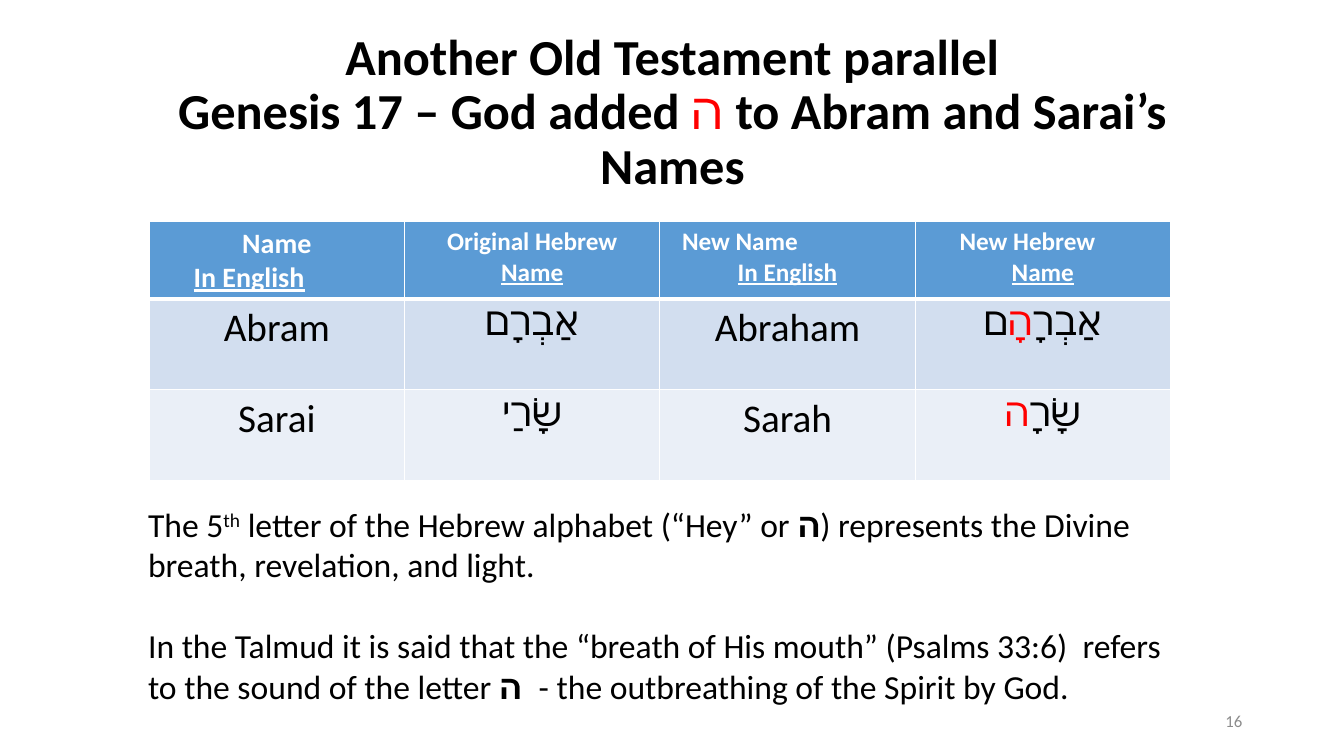
import pptx
import pptx.dml.color
import pptx.enum.text
import pptx.util
import pptx.oxml
import lxml.etree

RGBColor = pptx.dml.color.RGBColor
Inches = pptx.util.Inches
Pt = pptx.util.Pt
ALIGN = pptx.enum.text.PP_ALIGN
ANCHOR = pptx.enum.text.MSO_ANCHOR

BLACK = RGBColor(0x00, 0x00, 0x00)
WHITE = RGBColor(0xFF, 0xFF, 0xFF)
RED = RGBColor(0xFF, 0x00, 0x00)
GRAY = RGBColor(0x8C, 0x8C, 0x8C)
HEADER_BLUE = RGBColor(0x5B, 0x9B, 0xD5)
ROW_BLUES = (RGBColor(0xD2, 0xDE, 0xEF), RGBColor(0xEA, 0xEF, 0xF7))

HEADER_HEIGHT = 0.76
NAME_HEIGHT = 0.9
HEADERS = (
    (20, ("Name", None), ("In English", 0.34)),
    (18, ("Original Hebrew", None), ("Name", None)),
    (18, ("New Name", 0.12), ("In English", None)),
    (18, ("New Hebrew", 0.34), ("Name", None)),
)
NAMES = (
    (("Abram",), ("אַבְרָם",), ("Abraham",),
     ("אַבְרָ", ("הָ", {"color": RED}), "ם")),
    (("Sarai",), ("שָׂרַי",), ("Sarah",),
     ("שָׂרָ", ("ה", {"color": RED}))),
)


def add_run(paragraph, text, size=24, color=BLACK, bold=False, underline=False, baseline=None):
    run = paragraph.add_run()
    run.text = text
    run.font.name = "Calibri"
    run.font.size = Pt(size)
    run.font.color.rgb = color
    run.font.bold = bold
    run.font.underline = underline
    if baseline:
        run.font._element.set("baseline", str(baseline * 1000))


def write_paragraph(frame, pieces, align=ALIGN.LEFT, indent=None, first=True,
                    line_spacing=None, space_before=None, **style):
    paragraph = frame.paragraphs[0] if first else frame.add_paragraph()
    paragraph.alignment = align
    paragraph.line_spacing = line_spacing
    if space_before:
        paragraph.space_before = Pt(space_before)
    if indent:
        paragraph._p.get_or_add_pPr().set("marL", str(Inches(indent)))
    for piece in pieces:
        text, changes = (piece, {}) if isinstance(piece, str) else piece
        if text == "\n":
            paragraph.add_line_break()
        else:
            add_run(paragraph, text, **{**style, **changes})


def add_frame(slide, box, anchor=ANCHOR.TOP):
    frame = slide.shapes.add_textbox(*map(Inches, box)).text_frame
    frame.word_wrap = True
    frame.vertical_anchor = anchor
    return frame


def style_cell(cell, color, bottom_width=1):
    properties = cell._tc.get_or_add_tcPr()
    for side in ("lnL", "lnR", "lnT", "lnB"):
        width = bottom_width if side == "lnB" else 1
        line = lxml.etree.SubElement(
            properties, pptx.oxml.ns.qn("a:" + side), w=str(Pt(width)))
        fill = lxml.etree.SubElement(line, pptx.oxml.ns.qn("a:solidFill"))
        lxml.etree.SubElement(fill, pptx.oxml.ns.qn("a:srgbClr"), val=str(WHITE))
    cell.fill.solid()
    cell.fill.fore_color.rgb = color


def add_title(slide, box):
    pieces = ("Another Old Testament parallel", "\n", "Genesis 17 – God added ",
              ("ה ", {"color": RED, "bold": False}), "to Abram and Sarai’s Names")
    write_paragraph(add_frame(slide, box, ANCHOR.MIDDLE), pieces, ALIGN.CENTER,
                    line_spacing=0.9, size=36, bold=True)


def add_names_table(slide, box):
    table = slide.shapes.add_table(
        len(NAMES) + 1, len(HEADERS), *map(Inches, box)).table
    for row in table.rows:
        row.height = Inches(NAME_HEIGHT)
    table.rows[0].height = Inches(HEADER_HEIGHT)
    for column, (size, *lines) in enumerate(HEADERS):
        cell = table.cell(0, column)
        style_cell(cell, HEADER_BLUE, bottom_width=3)
        for index, (text, indent) in enumerate(lines):
            write_paragraph(cell.text_frame, (text,),
                            ALIGN.LEFT if indent else ALIGN.CENTER, indent,
                            first=index == 0, size=size, color=WHITE,
                            bold=True, underline=index == 1)
    for row, (names, color) in enumerate(zip(NAMES, ROW_BLUES), start=1):
        for column, pieces in enumerate(names):
            cell = table.cell(row, column)
            style_cell(cell, color)
            write_paragraph(cell.text_frame, pieces, ALIGN.CENTER, size=28)


def add_explanation(slide, box):
    frame = add_frame(slide, box)
    hey = ("ה", {"bold": True})
    write_paragraph(frame, ("The 5", ("th", {"baseline": 30}),
                            " letter of the Hebrew alphabet (“Hey” or ", hey,
                            ") represents the Divine breath, revelation, and light."))
    write_paragraph(frame, ("In the Talmud it is said that the “breath of His mouth” "
                            "(Psalms 33:6)  refers to the sound of the letter ", hey,
                            "  - the outbreathing of the Spirit by God."),
                    first=False, space_before=29)


def add_page_number(slide, box):
    write_paragraph(add_frame(slide, box, ANCHOR.MIDDLE), ("16",), ALIGN.RIGHT,
                    size=12, color=GRAY)


def main():
    presentation = pptx.Presentation()
    presentation.slide_width = Inches(13.33)
    presentation.slide_height = Inches(7.5)
    slide = presentation.slides.add_slide(presentation.slide_layouts[6])
    add_title(slide, (0.92, 0.4, 11.5, 1.45))
    add_names_table(slide, (1.48, 2.2, 10.13, HEADER_HEIGHT + 2 * NAME_HEIGHT))
    add_explanation(slide, (1.37, 4.95, 10.39, 2.12))
    add_page_number(slide, (9.42, 6.95, 3, 0.4))
    presentation.save("out.pptx")


if __name__ == "__main__":
    main()
